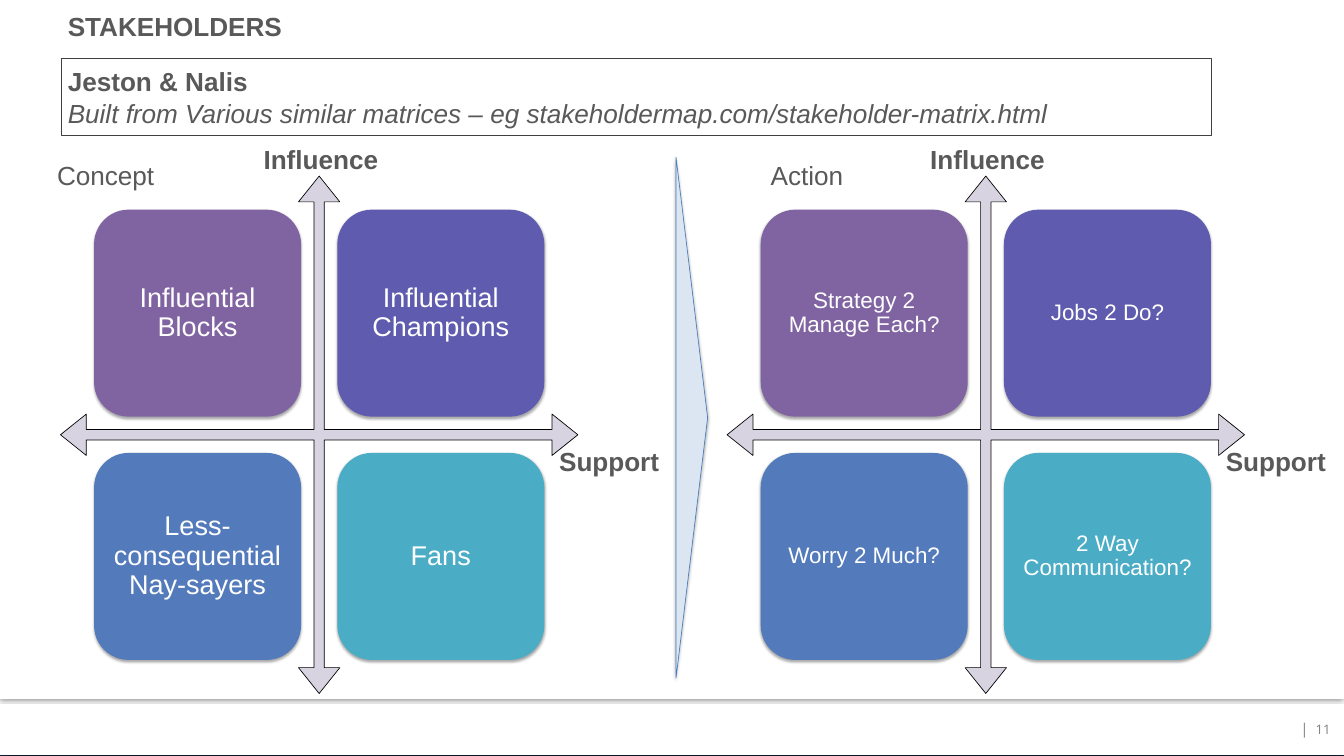
"""Build the stakeholder matrix slide: concept and action quadrants side by side."""
from lxml.etree import SubElement
from pptx import Presentation
from pptx.dml.color import RGBColor
from pptx.enum.shapes import MSO_SHAPE as Shape
from pptx.enum.text import MSO_ANCHOR as Anchor, PP_ALIGN as Align
from pptx.oxml.ns import qn
from pptx.util import Inches, Pt

WIDTH, HEIGHT = 20, 11.25
GREY, WHITE, BLACK, PALE = "595959", "FFFFFF", "000000", "D8D3E0"
TILE_COLOURS = ["8064A2", "5F5BAE", "537ABA", "4BACC6"]
PANELS = [
    {"name": "Concept", "left": 0.9, "name_left": 0.75, "size": 29, "inset": 0.12,
     "tiles": ["Influential Blocks", "Influential Champions",
               "Less-consequential Nay-sayers", "Fans"]},
    {"name": "Action", "left": 10.82, "name_left": 11.37, "size": 24, "inset": 0.1,
     "tiles": ["Strategy 2 Manage Each?", "Jobs 2 Do?",
               "Worry 2 Much?", "2 Way Communication?"]},
]
HEADING = "STAKEHOLDERS"
TITLE = [("Jeston & Nalis", {"bold": True}),
         ("Built from Various similar matrices – eg "
          "stakeholdermap.com/stakeholder-matrix.html", {"italic": True})]
FOOTER = [("11", (19.55, 10.74, 0.25, 0.24), 14), ("|", (19.35, 10.71, 0.12, 0.27), 16)]
PANEL_TOP, PANEL_SIZE = 2.62, 7.7
TILE_MARGIN, TILE_SIZE, TILE_PITCH = 0.5, 3.08, 3.62
LABEL_WIDTH, LABEL_HEIGHT = 4.43, 0.57


def colour(value):
    return RGBColor.from_string(value)


def set_font(font, **values):
    values = {"name": "Arial", "size": 28, "color": GREY} | values
    font.color.rgb = colour(values.pop("color"))
    font.size = Pt(values.pop("size"))
    for name, value in values.items():
        setattr(font, name, value)


def set_frame(frame, inset=None, **values):
    if inset is not None:
        for side in ("left", "top", "right", "bottom"):
            values["margin_" + side] = Inches(inset)
    for name, value in ({"word_wrap": True} | values).items():
        setattr(frame, name, value)


def add_shadow(shape, opacity, distance):
    effects = shape._element.spPr.find(qn("a:effectLst"))
    shadow = SubElement(effects, qn("a:outerShdw"), blurRad=str(Pt(3.1)),
                        dist=str(Pt(distance)), dir="5400000", rotWithShape="0")
    black = SubElement(shadow, qn("a:srgbClr"), val=BLACK)
    SubElement(black, qn("a:alpha"), val=str(opacity * 1000))


def add_shape(slide, kind, box, fill=None, line=None, shadow=None):
    shape = slide.shapes.add_shape(kind, *map(Inches, box))
    shape.shadow.inherit = False
    if fill:
        shape.fill.solid()
        shape.fill.fore_color.rgb = colour(fill)
    else:
        shape.fill.background()
    if line:
        shape.line.color.rgb = colour(line)
        shape.line.width = Pt(0.75)
    else:
        shape.line.fill.background()
    if shadow:
        add_shadow(shape, *shadow)
    return shape


def add_label(slide, text, box, align=Align.LEFT, frame=None, **font):
    label = slide.shapes.add_textbox(*map(Inches, box))
    set_frame(label.text_frame, **(frame or {}))
    paragraph = label.text_frame.paragraphs[0]
    paragraph.alignment = align
    run = paragraph.add_run()
    run.text = text
    set_font(run.font, **font)


def add_background(slide):
    add_shape(slide, Shape.RECTANGLE, (0, 0, WIDTH, HEIGHT), "0F243E", shadow=(35, 1.8))
    add_shape(slide, Shape.RECTANGLE, (0, 10.41, WIDTH, 0.82), WHITE, WHITE, (35, 1.8))
    for text, box, size in FOOTER:
        add_label(slide, text, box, Align.RIGHT, {"inset": 0, "word_wrap": False},
                  name="Open Sans", size=size, color="808080")
    add_shape(slide, Shape.RECTANGLE, (0, 0, WIDTH, 10.4), WHITE, shadow=(38, 1.6))


def add_title(slide):
    title = add_shape(slide, Shape.RECTANGLE, (0.91, 0.87, 17.12, 1.15), line="404040")
    set_frame(title.text_frame, vertical_anchor=Anchor.MIDDLE)
    paragraph = title.text_frame.paragraphs[0]
    paragraph.alignment = Align.LEFT
    for index, (text, style) in enumerate(TITLE):
        if index:
            paragraph.add_line_break()
        run = paragraph.add_run()
        run.text = text
        set_font(run.font, **style)
    add_label(slide, HEADING, (0.91, 0.1, 7.22, LABEL_HEIGHT), bold=True)


def add_panel(slide, panel):
    left = panel["left"]
    axes = add_shape(slide, Shape.QUAD_ARROW, (left, PANEL_TOP, PANEL_SIZE, PANEL_SIZE),
                     PALE, BLACK)
    for index, value in enumerate((0.02, 0.04, 0.05)):
        axes.adjustments[index] = value
    for index, (text, fill) in enumerate(zip(panel["tiles"], TILE_COLOURS)):
        row, column = divmod(index, 2)
        box = (left + TILE_MARGIN + column * TILE_PITCH,
               PANEL_TOP + TILE_MARGIN + row * TILE_PITCH, TILE_SIZE, TILE_SIZE)
        tile = add_shape(slide, Shape.ROUNDED_RECTANGLE, box, fill, shadow=(35, 1.8))
        set_frame(tile.text_frame, panel["inset"], vertical_anchor=Anchor.MIDDLE)
        paragraph = tile.text_frame.paragraphs[0]
        paragraph.alignment, paragraph.line_spacing = Align.CENTER, 0.9
        run = paragraph.add_run()
        run.text = text
        set_font(run.font, size=panel["size"], color=WHITE)
    for text, offset, top in (("Influence", 1.66, 2.08), ("Support", 5.95, 6.58)):
        add_label(slide, text, (left + offset, top, LABEL_WIDTH, LABEL_HEIGHT),
                  Align.CENTER, bold=True)
    add_label(slide, panel["name"], (panel["name_left"], 2.32, 2.38, LABEL_HEIGHT))


def main():
    presentation = Presentation()
    presentation.slide_width, presentation.slide_height = Inches(WIDTH), Inches(HEIGHT)
    slide = presentation.slides.add_slide(presentation.slide_layouts[6])
    add_background(slide)
    add_title(slide)
    divider = add_shape(slide, Shape.ISOSCELES_TRIANGLE, (6.42, 5.98, 7.75, 0.47),
                        "DCE6F2", "4B7EBC", (35, 1.8))
    divider.rotation = 90
    for panel in PANELS:
        add_panel(slide, panel)
    presentation.save("out.pptx")


if __name__ == "__main__":
    main()
